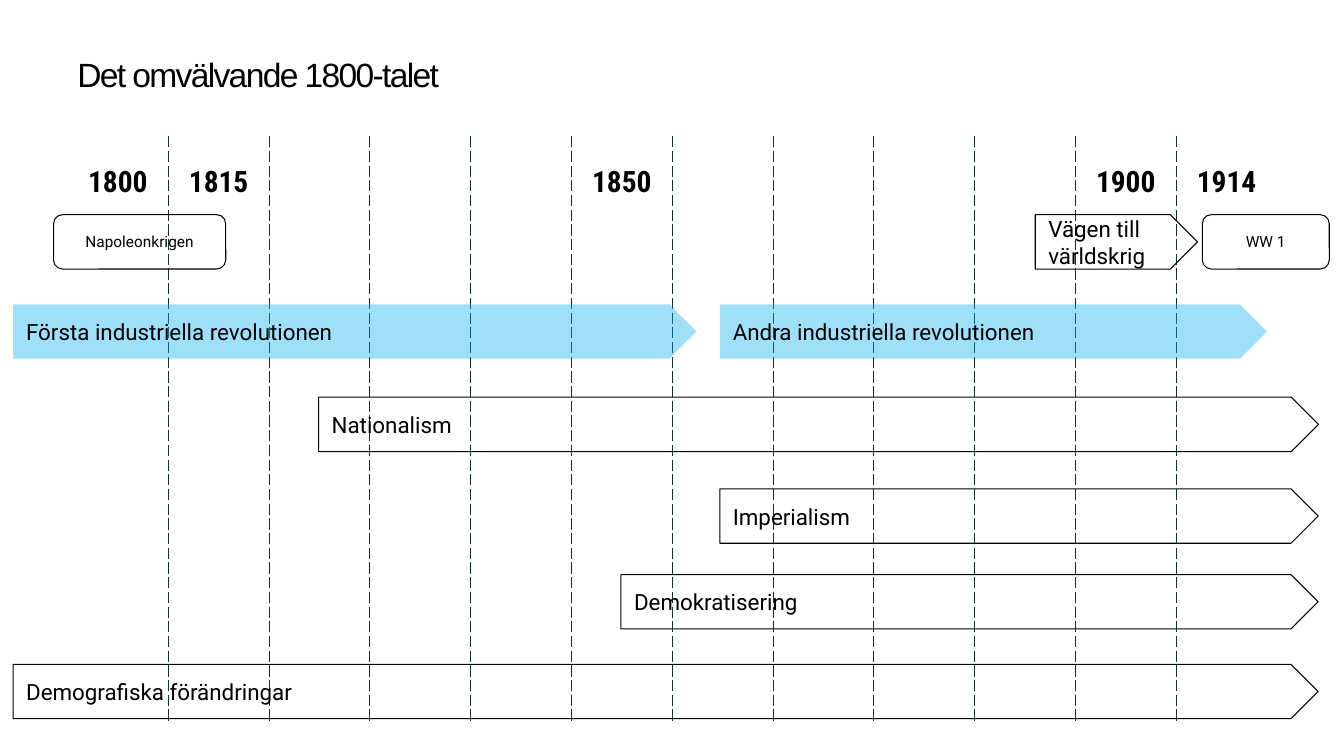
from lxml import etree
from pptx import Presentation
from pptx.dml.color import RGBColor
from pptx.enum.shapes import MSO_SHAPE as SHAPE
from pptx.enum.text import MSO_ANCHOR as ANCHOR, PP_ALIGN as ALIGN
from pptx.oxml import parse_xml
from pptx.oxml.ns import nsdecls, qn
from pptx.util import Cm, Pt

BLACK = RGBColor(0x00, 0x00, 0x00)
SKY = RGBColor(0x00, 0xB0, 0xF0)
GRID = RGBColor(0x16, 0x2F, 0x33)

BAR_HEIGHT = 1.37
COLUMNS = 12
ROW_HEIGHTS = (2.34, 12.45)
YEARS = {0: "1800", 1: "1815", 5: "1850", 10: "1900", 11: "1914"}
ARROWS = [
    ("Nationalism", 8.03, 10.01, 25.2, False),
    ("Imperialism", 18.14, 12.32, 15.08, False),
    ("Andra industriella revolutionen", 18.14, 7.67, 13.79, True),
    ("Demokratisering", 15.65, 14.48, 17.57, False),
    ("Vägen till världskrig", 26.09, 5.41, 4.09, False),
    ("Första industriella revolutionen", 0.33, 7.67, 17.22, True),
    ("Demografiska förändringar", 0.33, 16.74, 32.89, False),
]
WARS = [("Napoleonkrigen", 1.35, 5.41, 4.34), ("WW 1", 30.3, 5.41, 3.2)]


class Timeline:
    font = "Roboto"
    inset = Cm(0.33)

    def __init__(self, slide):
        self.s = slide

    def style(self, tf, text, size, font, align=ALIGN.LEFT, bold=False):
        tf.text = text
        p = tf.paragraphs[0]
        p.alignment = align
        r = p.runs[0]
        r.font.size = Pt(size)
        r.font.name = font
        r.font.bold = bold
        r.font.color.rgb = BLACK
        return r

    def title(self, text):
        tf = self.s.shapes.add_textbox(Cm(1.7), Cm(1.19), Cm(30.48), Cm(1.37)).text_frame
        tf.word_wrap = True
        tf.vertical_anchor = ANCHOR.MIDDLE
        r = self.style(tf, text, 24, "Arial")
        r._r.get_or_add_rPr().set("spc", "-120")

    def border(self, cell, index, side, visible):
        paint = (
            f'<a:solidFill><a:srgbClr val="{GRID}"/></a:solidFill><a:prstDash val="dash"/>'
            if visible else "<a:noFill/>"
        )
        ln = parse_xml(f'<a:ln{side} {nsdecls("a")} w="{Pt(0.75)}">{paint}</a:ln{side}>')
        cell._tc.get_or_add_tcPr().insert(index, ln)

    def grid(self):
        table = self.s.shapes.add_table(
            len(ROW_HEIGHTS), COLUMNS, Cm(1.7), Cm(3.43),
            Cm(2.54 * COLUMNS), Cm(sum(ROW_HEIGHTS))).table
        table.first_row = table.horz_banding = False
        for row, height in zip(table.rows, ROW_HEIGHTS):
            row.height = Cm(height)
            for col, cell in enumerate(row.cells):
                cell.fill.background()
                visible = {"L": col > 0, "R": col < COLUMNS - 1, "T": False, "B": False}
                for index, side in enumerate(visible):
                    self.border(cell, index, side, visible[side])
        for col, year in YEARS.items():
            cell = table.cell(0, col)
            cell.vertical_anchor = ANCHOR.MIDDLE
            cell.margin_left = cell.margin_right = self.inset
            cell.margin_top = cell.margin_bottom = self.inset
            self.style(cell.text_frame, year, 21, "Roboto Condensed", ALIGN.CENTER, True)

    def bar(self, kind, text, left, top, width, size, align, filled=False):
        sp = self.s.shapes.add_shape(kind, Cm(left), Cm(top), Cm(width), Cm(BAR_HEIGHT))
        sp.shadow.inherit = False
        if filled:
            sp.fill.solid()
            sp.fill.fore_color.rgb = SKY
            color = sp._element.spPr.find(".//" + qn("a:srgbClr"))
            etree.SubElement(color, qn("a:alpha"), val="38000")
            sp.line.fill.background()
        else:
            sp.fill.background()
            sp.line.color.rgb = BLACK
            sp.line.width = Pt(0.75)
        tf = sp.text_frame
        tf.word_wrap = True
        tf.vertical_anchor = ANCHOR.MIDDLE
        tf.margin_left = tf.margin_right = self.inset
        tf.margin_top = tf.margin_bottom = self.inset
        self.style(tf, text, size, self.font, align)

    def arrow(self, text, left, top, width, filled):
        self.bar(SHAPE.PENTAGON, text, left, top, width, 16, ALIGN.LEFT, filled)

    def war(self, text, left, top, width):
        self.bar(SHAPE.ROUNDED_RECTANGLE, text, left, top, width, 11, ALIGN.CENTER)


def main():
    prs = Presentation()
    prs.slide_width, prs.slide_height = Cm(33.87), Cm(19.05)
    timeline = Timeline(prs.slides.add_slide(prs.slide_layouts[6]))
    timeline.grid()
    timeline.title("Det omvälvande 1800-talet")
    for arrow in ARROWS:
        timeline.arrow(*arrow)
    for war in WARS:
        timeline.war(*war)
    prs.save("out.pptx")


if __name__ == "__main__":
    main()
